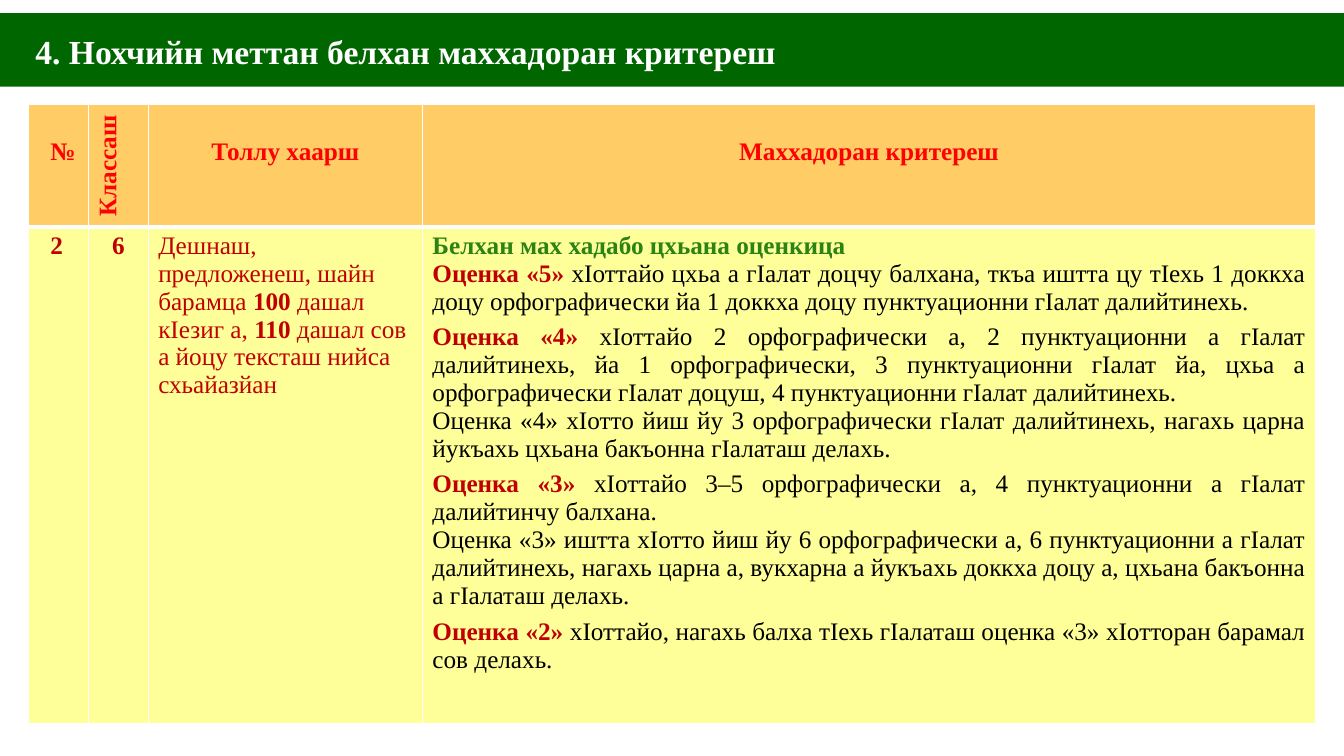
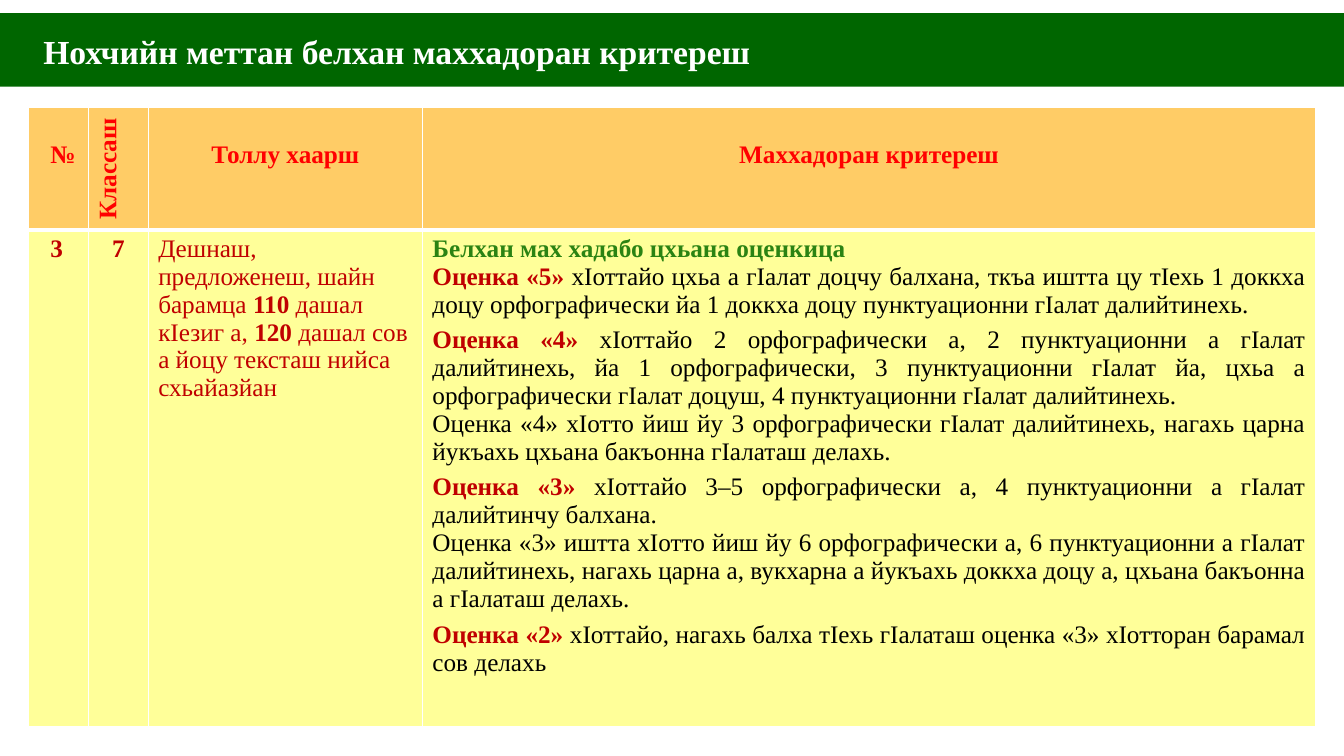
from dataclasses import dataclass

from lxml.etree import SubElement
from pptx import Presentation
from pptx.dml.color import RGBColor
from pptx.enum.text import MSO_ANCHOR, MSO_AUTO_SIZE, PP_ALIGN
from pptx.oxml.ns import qn
from pptx.util import Inches, Pt

FONT = "Times New Roman"
WHITE = RGBColor(0xFF, 0xFF, 0xFF)
BLACK = RGBColor(0x00, 0x00, 0x00)
BAND_GREEN = RGBColor(0x00, 0x66, 0x00)
HEADING_GREEN = RGBColor(0x2B, 0x83, 0x13)
HEADER_ORANGE = RGBColor(0xFF, 0xCC, 0x66)
BODY_YELLOW = RGBColor(0xFF, 0xFF, 0x99)
HEADER_RED = RGBColor(0xFF, 0x00, 0x00)
DARK_RED = RGBColor(0xC0, 0x00, 0x00)

SLIDE_WIDTH, SLIDE_HEIGHT = 13.33, 7.5
COLUMN_WIDTHS = (0.6, 0.59, 2.72, 8.86)
ROW_HEIGHTS = (1.21, 4.93)
TABLE_LEFT = 0.28
NUMBER_INDENT = 0.22
HEADER_DROP = 0.33


@dataclass(frozen=True)
class Span:
    text: str
    color: RGBColor = BLACK
    bold: bool = False


@dataclass(frozen=True)
class Para:
    spans: tuple[Span, ...]
    align: PP_ALIGN = PP_ALIGN.LEFT
    space_before: float = 0


@dataclass(frozen=True)
class CellContent:
    paras: tuple[Para, ...]
    margin_left: float = 0.1
    margin_top: float = 0.05
    vertical: bool = False


@dataclass(frozen=True)
class GradeSlide:
    title: str
    title_indent: float
    table_top: float
    number: str
    grade: str
    min_words: str
    max_words: str
    ending: str


GRADE_SLIDES = (
    GradeSlide("4. Нохчийн меттан белхан маххадоран критереш", 0.35, 1.04,
               "2", "6", "100", "110", "делахь."),
    GradeSlide("Нохчийн меттан белхан маххадоран критереш", 0.43, 1.07,
               "3", "7", "110", "120", "делахь"),
)


def header(text: str, align: PP_ALIGN = PP_ALIGN.CENTER) -> tuple[Para, ...]:
    return (Para((Span(text, HEADER_RED, True),), align),)


HEADER_CELLS = (
    CellContent(header("№", PP_ALIGN.LEFT), NUMBER_INDENT, HEADER_DROP),
    CellContent(header("Классаш", PP_ALIGN.LEFT), vertical=True),
    CellContent(header("Толлу хаарш"), margin_top=HEADER_DROP),
    CellContent(header("Маххадоран критереш"), margin_top=HEADER_DROP),
)


def mark_para(mark: int, rule: str, space_before: float = 5.5) -> Para:
    """A criterion that opens with its mark in bold red."""
    return Para((Span(f"Оценка «{mark}» ", DARK_RED, True), Span(rule)),
                PP_ALIGN.JUSTIFY, space_before)


def note_para(text: str) -> Para:
    return Para((Span(text),), PP_ALIGN.JUSTIFY)


def criteria(ending: str) -> tuple[Para, ...]:
    return (
        Para((Span("Белхан мах хадабо цхьана оценкица", HEADING_GREEN, True),)),
        mark_para(5, "хӀоттайо цхьа а гӀалат доцчу балхана, ткъа иштта цу тӀехь 1 доккха "
                     "доцу орфографически йа 1 доккха доцу пунктуационни гӀалат "
                     "далийтинехь.", 0),
        mark_para(4, "хӀоттайо 2 орфографически а, 2 пунктуационни а гӀалат далийтинехь, "
                     "йа 1 орфографически, 3 пунктуационни гӀалат йа, цхьа а "
                     "орфографически гӀалат доцуш, 4 пунктуационни гӀалат далийтинехь."),
        note_para("Оценка «4» хӀотто йиш йу 3 орфографически гӀалат далийтинехь, нагахь "
                  "царна йукъахь цхьана бакъонна гӀалаташ делахь."),
        mark_para(3, "хӀоттайо 3–5 орфографически а, 4 пунктуационни а гӀалат "
                     "далийтинчу балхана."),
        note_para("Оценка «3» иштта хӀотто йиш йу 6 орфографически а, 6 пунктуационни а "
                  "гӀалат далийтинехь, нагахь царна а, вукхарна а йукъахь доккха доцу а, "
                  "цхьана бакъонна а гӀалаташ делахь."),
        mark_para(2, "хӀоттайо, нагахь балха тӀехь гӀалаташ оценка «3» хӀотторан "
                     f"барамал сов {ending}"),
    )


def body_cells(content: GradeSlide) -> tuple[CellContent, ...]:
    skill = Para((
        Span("Дешнаш, предложенеш, шайн барамца ", DARK_RED),
        Span(f"{content.min_words} ", DARK_RED, True),
        Span("дашал кӀезиг а, ", DARK_RED),
        Span(f"{content.max_words} ", DARK_RED, True),
        Span("дашал сов а йоцу тексташ нийса схьайазйан", DARK_RED),
    ))
    number = Para((Span(content.number, DARK_RED, True),))
    grade = Para((Span(content.grade, DARK_RED, True),), PP_ALIGN.CENTER)
    return (
        CellContent((number,), NUMBER_INDENT),
        CellContent((grade,)),
        CellContent((skill,)),
        CellContent(criteria(content.ending)),
    )


def write_para(paragraph, para: Para, size: float) -> None:
    paragraph.alignment = para.align
    paragraph.space_before = Pt(para.space_before)
    for span in para.spans:
        run = paragraph.add_run()
        run.text = span.text
        run.font.name = FONT
        run.font.size = Pt(size)
        run.font.bold = span.bold
        run.font.color.rgb = span.color


def set_borders(cell, top: float, bottom: float) -> None:
    """White cell borders; must run before the fill, which follows them in the XML."""
    properties = cell._tc.get_or_add_tcPr()
    for tag, width in (("a:lnL", 1), ("a:lnR", 1), ("a:lnT", top), ("a:lnB", bottom)):
        line = SubElement(properties, qn(tag), w=str(Pt(width)))
        SubElement(SubElement(line, qn("a:solidFill")), qn("a:srgbClr"), val=str(WHITE))


def fill_cell(cell, content: CellContent, color: RGBColor) -> None:
    cell.fill.solid()
    cell.fill.fore_color.rgb = color
    cell.margin_left = Inches(content.margin_left)
    cell.margin_top = Inches(content.margin_top)
    if content.vertical:
        cell._tc.get_or_add_tcPr().set("vert", "vert270")
    frame = cell.text_frame
    for index, para in enumerate(content.paras):
        write_para(frame.add_paragraph() if index else frame.paragraphs[0], para, 18)


def add_title_band(slide, text: str, indent: float) -> None:
    band = slide.shapes.title
    band.left, band.top = Inches(0), Inches(0.13)
    band.width, band.height = Inches(SLIDE_WIDTH), Inches(0.73)
    band.fill.solid()
    band.fill.fore_color.rgb = BAND_GREEN
    frame = band.text_frame
    frame.auto_size = MSO_AUTO_SIZE.NONE
    frame.vertical_anchor = MSO_ANCHOR.MIDDLE
    frame.margin_left = Inches(indent)
    frame.paragraphs[0].line_spacing = 1.07
    write_para(frame.paragraphs[0], Para((Span(text, WHITE, True),)), 24)


def add_criteria_table(slide, content: GradeSlide) -> None:
    table = slide.shapes.add_table(
        len(ROW_HEIGHTS), len(COLUMN_WIDTHS), Inches(TABLE_LEFT), Inches(content.table_top),
        Inches(sum(COLUMN_WIDTHS)), Inches(sum(ROW_HEIGHTS))).table
    for column, width in zip(table.columns, COLUMN_WIDTHS):
        column.width = Inches(width)
    rows = ((HEADER_CELLS, HEADER_ORANGE, 1, 3), (body_cells(content), BODY_YELLOW, 3, 1))
    for row, height, (cells, color, top, bottom) in zip(table.rows, ROW_HEIGHTS, rows):
        row.height = Inches(height)
        for cell, cell_content in zip(row.cells, cells):
            set_borders(cell, top, bottom)
            fill_cell(cell, cell_content, color)


def main() -> None:
    deck = Presentation()
    deck.slide_width, deck.slide_height = Inches(SLIDE_WIDTH), Inches(SLIDE_HEIGHT)
    title_only = deck.slide_layouts[5]
    for content in GRADE_SLIDES:
        slide = deck.slides.add_slide(title_only)
        add_title_band(slide, content.title, content.title_indent)
        add_criteria_table(slide, content)
    deck.save("out.pptx")


if __name__ == "__main__":
    main()
